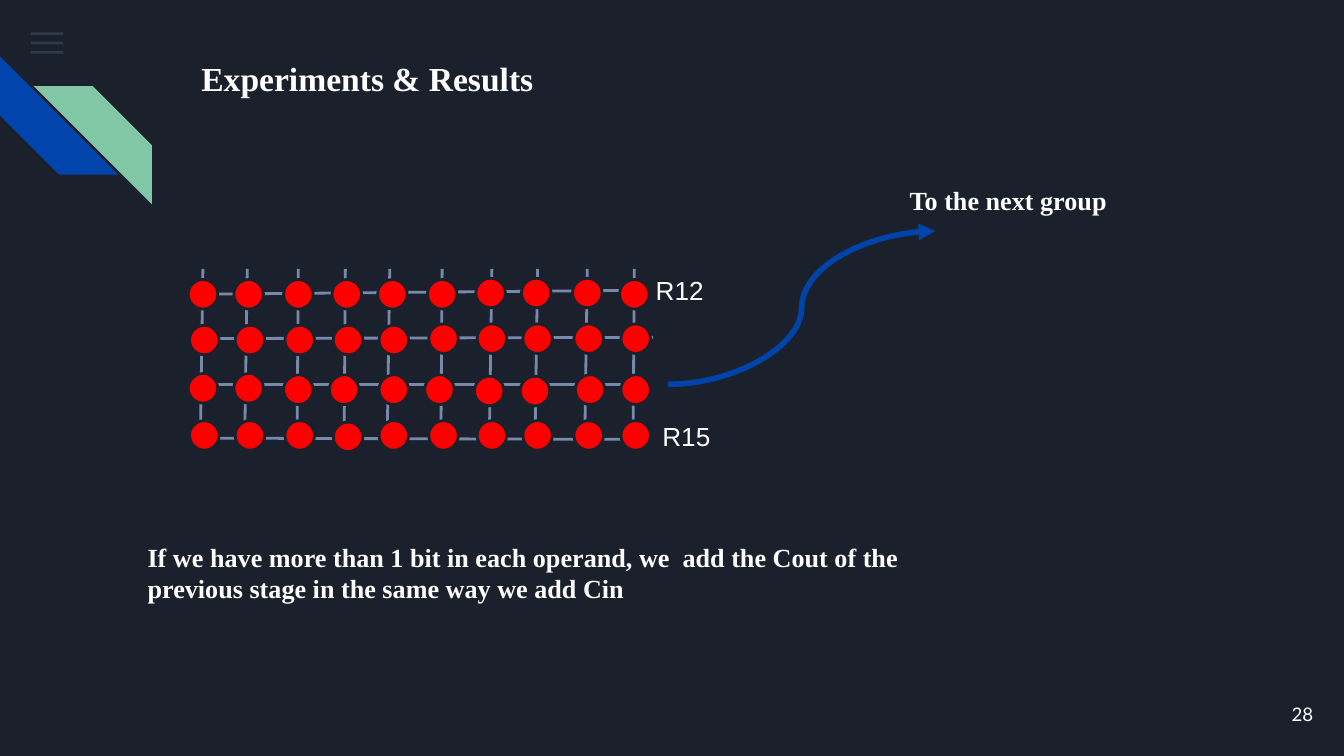
from pptx import Presentation
from pptx.dml.color import RGBColor
from pptx.enum.shapes import MSO_CONNECTOR, MSO_SHAPE
from pptx.enum.text import MSO_ANCHOR, PP_ALIGN
from pptx.oxml.ns import qn
from pptx.util import Inches, Pt
from lxml.etree import SubElement

PX = 9144

BACKGROUND = RGBColor(0x1B, 0x21, 0x2C)
WHITE = RGBColor(0xFF, 0xFF, 0xFF)
RED = RGBColor(0xFF, 0x00, 0x00)
WIRE = RGBColor(0x77, 0x8A, 0xAC)
MENU = RGBColor(0x55, 0x68, 0x8B)
STRIPE_BLUE = RGBColor(0x01, 0x45, 0xAC)
STRIPE_GREEN = RGBColor(0x82, 0xC7, 0xA5)
ARROW_BLUE = RGBColor(0x00, 0x43, 0xA9)

HEADING = {"name": "Times New Roman", "size": Pt(18), "bold": True}
STATEMENT = {"name": "Times New Roman", "size": Pt(14), "bold": True}
ROW_LABEL = {"name": "Arial", "size": Pt(14)}
PAGE_NUMBER = {"name": "Lato", "size": Pt(10)}

COLUMNS = [0, 34, 71, 107, 141, 178, 214, 248, 286, 321]
SHIFTED_COLUMNS = [0, 34, 71, 105, 142, 176, 213, 247, 288, 322]
DOT_ROWS = [
    (0, COLUMNS, [9, 9, 9, 9, 9, 9, 8, 8, 8, 9]),
    (1, COLUMNS, [43] * 5 + [42] * 5),
    (0, SHIFTED_COLUMNS, [79, 79, 80, 80, 80, 80, 81, 81, 80, 80]),
    (1, COLUMNS, [114] * 3 + [115] + [114] * 6),
]
ROW_WIRES = [
    (6, 127, 344, 128),
    (2, 20, 338, 17),
    (3, 53, 346, 52),
    (14, 87, 343, 87),
]
COLUMN_WIRES = [
    (11, 9), (44, 42), (82, 81), (117, 116), (150, 148),
    (189, 188), (226, 224), (260, 258), (297, 295), (332, 331),
]
DOT = 22
CORE = 17


def add_text(slide, box, text, font, anchor=MSO_ANCHOR.TOP,
             align=PP_ALIGN.LEFT, inset=5):
    left, top, width, height = box
    frame = slide.shapes.add_textbox(
        left * PX, top * PX, width * PX, height * PX).text_frame
    layout = {"word_wrap": True, "vertical_anchor": anchor,
              "margin_left": 10 * PX, "margin_right": 10 * PX,
              "margin_top": inset * PX, "margin_bottom": inset * PX}
    for key, value in layout.items():
        setattr(frame, key, value)
    paragraph = frame.paragraphs[0]
    paragraph.alignment = align
    run = paragraph.add_run()
    run.text = text
    for key, value in font.items():
        setattr(run.font, key, value)
    run.font.color.rgb = WHITE


def add_solid(slide, kind, box, color, outline=None):
    left, top, width, height = box
    shape = slide.shapes.add_shape(
        kind, left * PX, top * PX, width * PX, height * PX)
    shape.shadow.inherit = False
    shape.fill.solid()
    shape.fill.fore_color.rgb = color
    if outline is None:
        shape.line.fill.background()
    else:
        shape.line.color.rgb = outline
        shape.line.width = Pt(1.5)
    return shape


def add_line(slide, kind, ends, color, weight):
    line = slide.shapes.add_connector(kind, *[end * PX for end in ends])
    line.line.color.rgb = color
    line.line.width = Pt(weight)
    SubElement(line._element.spPr, qn("a:effectLst"))
    return line


def add_menu(slide, left, top):
    for row in range(3):
        bar = add_solid(slide, MSO_SHAPE.RECTANGLE,
                        (left, top + 7 * row, 24, 2), MENU)
        color = bar._element.spPr.find(f".//{qn('a:srgbClr')}")
        SubElement(color, qn("a:alpha"), val="35000")


def add_stripes(slide, left, top):
    blue = add_solid(slide, MSO_SHAPE.DIAGONAL_STRIPE,
                     (left, top, 88, 88), STRIPE_BLUE)
    blue.rotation = 270
    green = add_solid(slide, MSO_SHAPE.DIAGONAL_STRIPE,
                      (left + 25, top + 22, 88, 88), STRIPE_GREEN)
    green._element.spPr.xfrm.set("flipH", "1")


def add_dot_grid(slide, left, top):
    wires = ROW_WIRES + [(x1, 1, x2, 135) for x1, x2 in COLUMN_WIRES]
    for x1, y1, x2, y2 in wires:
        add_line(slide, MSO_CONNECTOR.STRAIGHT,
                 (left + x1, top + y1, left + x2, top + y2), WIRE, 1.5)
    for shift, columns, heights in DOT_ROWS:
        for column, height in zip(columns, heights):
            x, y = left + shift + column, top + height
            add_solid(slide, MSO_SHAPE.OVAL, (x, y, DOT, DOT), RED, BACKGROUND)
            if columns is SHIFTED_COLUMNS:
                core = add_solid(slide, MSO_SHAPE.PIE,
                                 (x + 3, y + 2, CORE, CORE), RED, RED)
                core.adjustments[1] = 64.91
                core.rotation = 180
    add_text(slide, (left + 338, top, 62, 34), "R12", ROW_LABEL)
    add_text(slide, (left + 343, top + 109, 62, 57), "R15", ROW_LABEL)


def add_next_group(slide, left, top):
    arrow = add_line(slide, MSO_CONNECTOR.CURVE,
                     (left, top + 154, left + 199, top + 40), ARROW_BLUE, 3)
    SubElement(arrow.line._get_or_add_ln(), qn("a:tailEnd"), type="triangle")
    add_text(slide, (left + 170, top, 236, 34), "To the next group", STATEMENT)


def main():
    presentation = Presentation()
    presentation.slide_width = Inches(10)
    presentation.slide_height = Inches(5.625)
    slide = presentation.slides.add_slide(presentation.slide_layouts[6])
    slide.background.fill.solid()
    slide.background.fill.fore_color.rgb = BACKGROUND
    add_menu(slide, 23, 24)
    add_stripes(slide, 0, 42)
    add_text(slide, (140, 33, 380, 48), "Experiments & Results", HEADING,
             inset=10)
    add_dot_grid(slide, 140, 199)
    add_next_group(slide, 497, 132)
    add_text(slide, (100, 398, 620, 57),
             "If we have more than 1 bit in each operand, we  add the Cout of "
             "the previous stage in the same way we add Cin", STATEMENT)
    add_text(slide, (927, 510, 60, 43), "28", PAGE_NUMBER,
             MSO_ANCHOR.MIDDLE, PP_ALIGN.RIGHT, 10)
    presentation.save("out.pptx")


if __name__ == "__main__":
    main()
